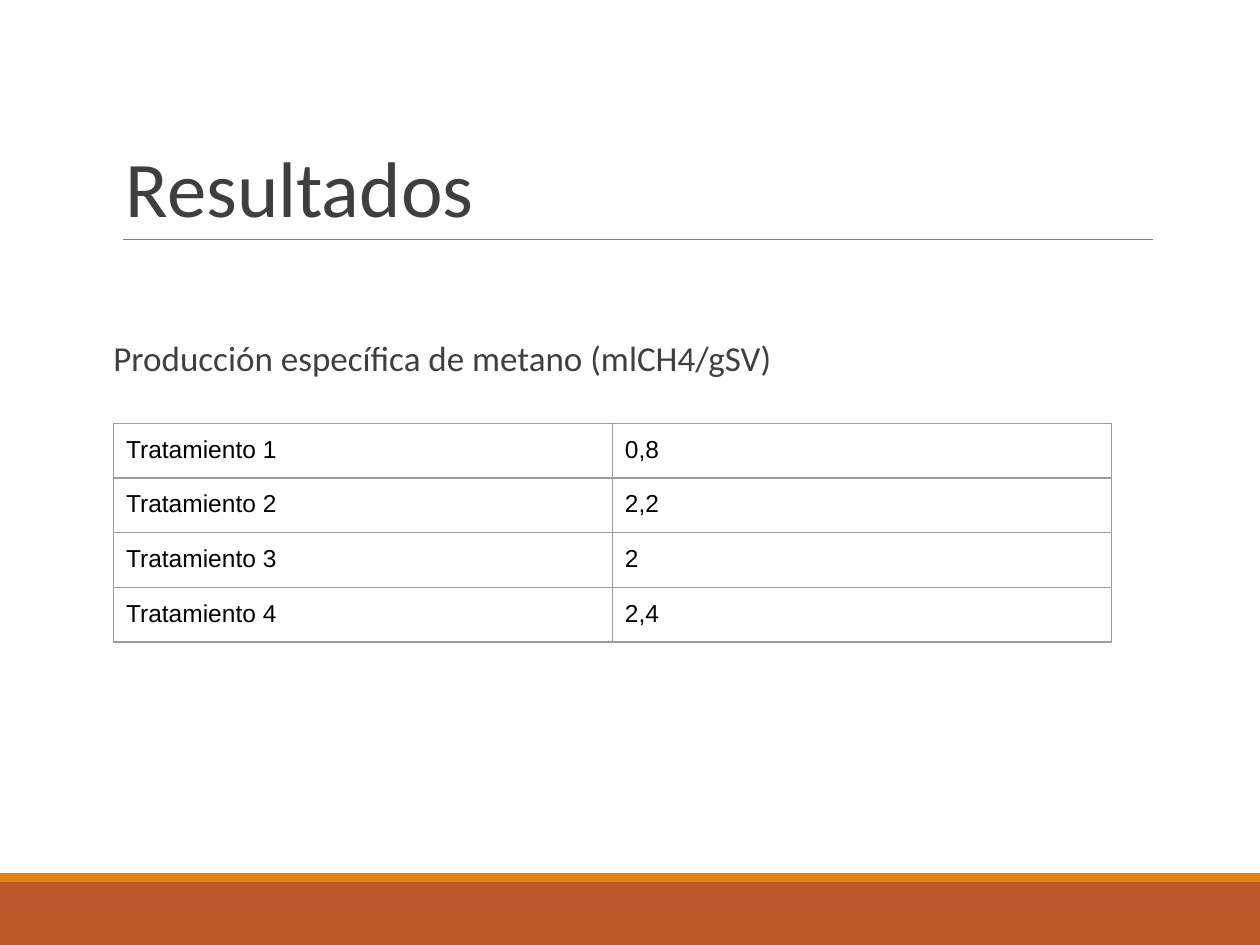
from dataclasses import dataclass

from lxml import etree
from pptx import Presentation
from pptx.dml.color import RGBColor
from pptx.enum import shapes, text
from pptx.oxml import ns
from pptx.util import Inches, Pt


@dataclass(frozen=True)
class Theme:
    """Colours, fonts and type sizes of the slide."""
    band: str = "BD582C"
    stripe: str = "E48312"
    rule: str = "7F7F7F"
    heading: str = "3F3F3F"
    cell_text: str = "000000"
    border: str = "9E9E9E"
    heading_font: str = "Calibri"
    cell_font: str = "Arial"
    title_size: int = 45
    subtitle_size: int = 20
    cell_size: int = 14
    line_width: float = 0.75


THEME = Theme()
RESULTS = [
    ("Tratamiento 1", "0,8"),
    ("Tratamiento 2", "2,2"),
    ("Tratamiento 3", "2"),
    ("Tratamiento 4", "2,4"),
]


def style_font(font, name, size, color):
    """Set the face, size and colour of a font."""
    font.name = name
    font.size = Pt(size)
    font.color.rgb = RGBColor.from_string(color)


def add_band(page, top, height, color):
    """Add a full-width coloured band."""
    band = page.shapes.add_shape(
        shapes.MSO_SHAPE.RECTANGLE, 0, Inches(top), Inches(10), Inches(height))
    band.shadow.inherit = False
    band.fill.solid()
    band.fill.fore_color.rgb = RGBColor.from_string(color)
    band.line.fill.background()


def add_rule(page, left, right, top):
    """Add a thin horizontal line without a shadow."""
    rule = page.shapes.add_connector(
        shapes.MSO_CONNECTOR.STRAIGHT,
        Inches(left), Inches(top), Inches(right), Inches(top))
    rule.line.color.rgb = RGBColor.from_string(THEME.rule)
    rule.line.width = Pt(THEME.line_width)
    etree.SubElement(rule._element.spPr, ns.qn("a:effectLst"))


def add_heading(page, words, top, height, size, spacing, inset, anchor):
    """Add a heading text box and return its paragraph."""
    box = page.shapes.add_textbox(
        Inches(0.9), Inches(top), Inches(8.25), Inches(height))
    frame = box.text_frame
    frame.word_wrap = True
    frame.vertical_anchor = anchor
    frame.margin_left = frame.margin_right = Inches(inset)
    para = frame.paragraphs[0]
    para.text = words
    para.line_spacing = spacing
    style_font(para.font, THEME.heading_font, size, THEME.heading)
    return para


def add_borders(cell):
    """Draw a thin line on all four sides of a cell."""
    properties = cell._tc.get_or_add_tcPr()
    for index, side in enumerate(("lnL", "lnR", "lnT", "lnB")):
        line = etree.Element(ns.qn(f"a:{side}"), w=str(Pt(THEME.line_width)))
        fill = etree.SubElement(line, ns.qn("a:solidFill"))
        etree.SubElement(fill, ns.qn("a:srgbClr"), val=THEME.border)
        properties.insert(index, line)


def fill_cell(cell, words):
    """Write and style one table cell."""
    cell.margin_left = cell.margin_right = Inches(0.1)
    cell.margin_top = cell.margin_bottom = Inches(0.1)
    cell.fill.background()
    cell.text = words
    style_font(cell.text_frame.paragraphs[0].font,
               THEME.cell_font, THEME.cell_size, THEME.cell_text)
    add_borders(cell)


def add_results(page, rows):
    """Add the table of results."""
    table = page.shapes.add_table(
        len(rows), len(rows[0]), Inches(0.9), Inches(3.36),
        Inches(7.92), Inches(0.42 * len(rows))).table
    table.first_row = table.horz_banding = False
    for row_index, row in enumerate(rows):
        for column_index, words in enumerate(row):
            fill_cell(table.cell(row_index, column_index), words)


def main():
    """Build the slide and save it."""
    deck = Presentation()
    deck.slide_width, deck.slide_height = Inches(10), Inches(7.5)
    page = deck.slides.add_slide(deck.slide_layouts[6])
    add_band(page, 7, 0.5, THEME.band)
    add_band(page, 6.93, 0.07, THEME.stripe)
    add_rule(page, 0.98, 9.15, 1.9)
    add_heading(page, "Resultados", 0.31, 1.59, THEME.title_size,
                0.85, 0.1, text.MSO_ANCHOR.BOTTOM)
    subtitle = add_heading(
        page, "Producción específica de metano (mlCH4/gSV)", 2.66, 4.4,
        THEME.subtitle_size, 0.9, 0, text.MSO_ANCHOR.TOP)
    subtitle.space_before, subtitle.space_after = Pt(12), Pt(2)
    add_results(page, RESULTS)
    deck.save("out.pptx")


if __name__ == "__main__":
    main()
